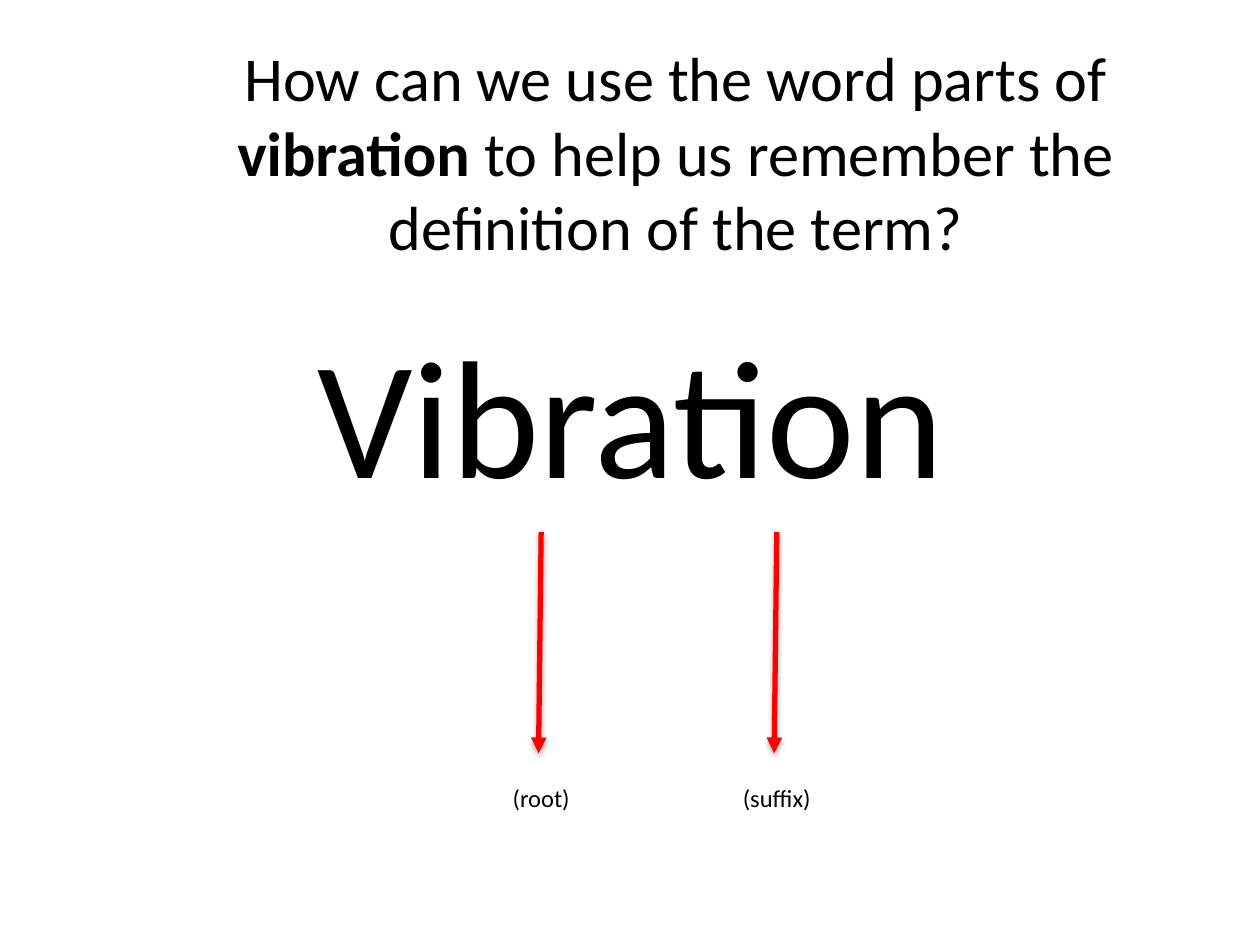
from dataclasses import dataclass

from lxml.etree import SubElement
from pptx import Presentation
from pptx.dml.color import RGBColor
from pptx.enum.shapes import MSO_CONNECTOR, MSO_SHAPE
from pptx.enum.text import MSO_ANCHOR, MSO_AUTO_SIZE, PP_ALIGN
from pptx.oxml.ns import qn
from pptx.util import Inches, Pt


@dataclass(frozen=True)
class Theme:
    font: str = "Calibri"
    ink: RGBColor = RGBColor(0, 0, 0)
    paper: RGBColor = RGBColor(255, 255, 255)
    arrow: RGBColor = RGBColor(255, 0, 0)
    question_size: float = 35.6
    word_size: float = 96
    label_size: float = 14


THEME = Theme()
WIDTH, HEIGHT = Inches(10), Inches(7.5)


def share(left, top, width, height):
    """Turn shares of the slide into a box of lengths."""
    return (int(WIDTH * left), int(HEIGHT * top),
            int(WIDTH * width), int(HEIGHT * height))


def place(shape, box):
    shape.left, shape.top, shape.width, shape.height = box


def write(shape, spans, size):
    """Write one centred paragraph of (text, bold) spans."""
    frame = shape.text_frame
    frame.word_wrap = True
    frame.auto_size = MSO_AUTO_SIZE.NONE
    frame.vertical_anchor = MSO_ANCHOR.MIDDLE
    para = frame.paragraphs[0]
    para.alignment = PP_ALIGN.CENTER
    para.space_before = Pt(0)
    for text, bold in spans:
        span = para.add_run()
        span.text = text
        span.font.name = THEME.font
        span.font.size = Pt(size)
        span.font.bold = bold
        span.font.color.rgb = THEME.ink


def add_heading(placeholder, box, spans, size):
    place(placeholder, box)
    write(placeholder, spans, size)


def style_arrow(connector):
    """Red line with a triangle head and a soft shadow below."""
    connector.line.color.rgb = THEME.arrow
    connector.line.width = Pt(3)
    SubElement(connector.line._get_or_add_ln(), qn("a:tailEnd"), type="triangle")
    effects = SubElement(connector._element.spPr, qn("a:effectLst"))
    shadow = SubElement(effects, qn("a:outerShdw"), blurRad=str(Pt(3.1)),
                        dist=str(Pt(1.6)), dir="5400000", rotWithShape="0")
    color = SubElement(shadow, qn("a:srgbClr"), val=str(THEME.ink))
    SubElement(color, qn("a:alpha"), val="35000")


def add_word_part(page, box, name):
    """An arrow from the word down to the label of one of its parts."""
    left, top, width, height = box
    middle = left + width // 2
    arrow = page.shapes.add_connector(
        MSO_CONNECTOR.STRAIGHT, middle, top,
        middle - int(width * 0.02), top + int(height * 0.77))
    style_arrow(arrow)

    label_top = int(height * 0.85)
    label = page.shapes.add_shape(
        MSO_SHAPE.RECTANGLE, left, top + label_top, width, height - label_top)
    label.shadow.inherit = False
    label.fill.background()
    label.line.color.rgb = THEME.paper
    label.line.width = Pt(0.75)
    write(label, [(name, False)], THEME.label_size)


def main():
    deck = Presentation()
    deck.slide_width, deck.slide_height = WIDTH, HEIGHT
    page = deck.slides.add_slide(deck.slide_layouts[0])

    # Question and the word it asks about
    question = [("How can we use the word parts of ", False),
                ("vibration", True),
                (" to help us remember the definition of the term?", False)]
    add_heading(page.shapes.title, share(0.118, 0.048, 0.837, 0.224),
                question, THEME.question_size)
    add_heading(page.placeholders[1], share(0.099, 0.33, 0.803, 0.21),
                [("Vibration", False)], THEME.word_size)

    # Word parts, one column each
    for column, name in enumerate(["(root)", "(suffix)"]):
        add_word_part(page, share(0.379 + 0.187 * column, 0.563, 0.101, 0.304), name)

    deck.save("out.pptx")


if __name__ == "__main__":
    main()
